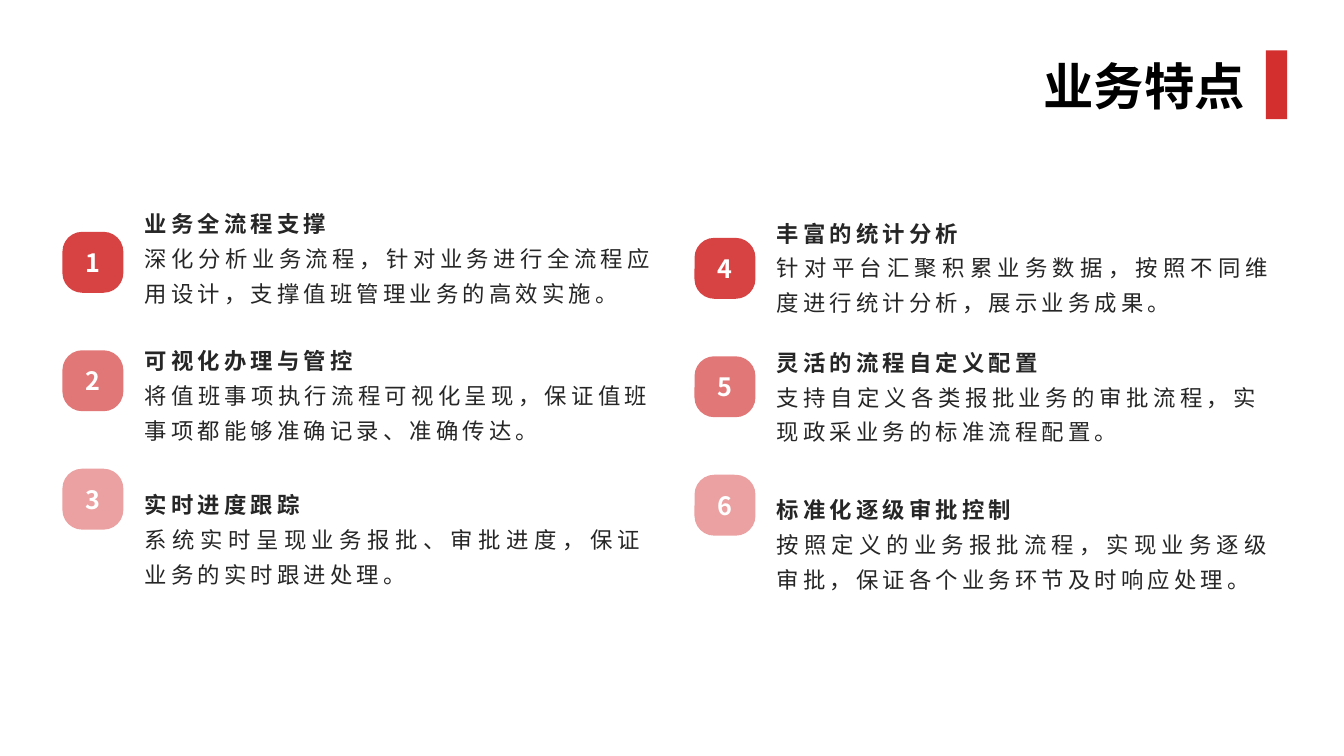
from dataclasses import dataclass

from lxml import etree
from pptx import Presentation
from pptx import util as u
from pptx.dml.color import RGBColor
from pptx.enum import shapes, text
from pptx.oxml import ns


@dataclass(frozen=True)
class Theme:
    font: str = "Noto Sans CJK SC"
    red: str = "D32F2F"
    black: str = "000000"
    ink: str = "262626"
    white: str = "FFFFFF"
    title: int = 36
    badge: int = 18
    body: int = 16
    track: int = 3
    lead: float = 1.3


THEME = Theme()
ALIGN = text.PP_ALIGN
BADGE = 43.5    # side of a number badge
PITCH = 84.6    # step from badge to badge
INDENT = 51.8   # from badge edge to text edge
HEIGHT = 82.8   # height of a text block
ALPHAS = (90, 65, 45)

# Each item: top below the column's first badge, width, heading, body
LEFT = [
    (-24.5, 378.7, "业务全流程支撑",
     "深化分析业务流程，针对业务进行全流程应用设计，支撑值班管理业务的高效实施。"),
    (73.4, 376.6, "可视化办理与管控",
     "将值班事项执行流程可视化呈现，保证值班事项都能够准确记录、准确传达。"),
    (175.7, 371.5, "实时进度跟踪",
     "系统实时呈现业务报批、审批进度，保证业务的实时跟进处理。"),
]
RIGHT = [
    (-22.3, 368.6, "丰富的统计分析",
     "针对平台汇聚积累业务数据，按照不同维度进行统计分析，展示业务成果。"),
    (69.9, 360, "灵活的流程自定义配置",
     "支持自定义各类报批业务的审批流程，实现政采业务的标准流程配置。"),
    (175, 367.2, "标准化逐级审批控制",
     "按照定义的业务报批流程，实现业务逐级审批，保证各个业务环节及时响应处理。"),
]


def write(para, words, size, color, bold=True, align=ALIGN.LEFT, track=0):
    """Fill one paragraph and style it as a whole."""
    para.add_run().text = words
    para.alignment = align
    font = para.font
    font.name = THEME.font
    font.size = u.Pt(size)
    font.bold = bold
    font.color.rgb = RGBColor.from_string(color)
    props = para._p.pPr.find(ns.qn("a:defRPr"))
    etree.SubElement(props, ns.qn("a:ea"), typeface=THEME.font)
    if track:
        props.set("spc", str(track * 100))


def add_text(slide, x, y, w, h):
    frame = slide.shapes.add_textbox(*map(u.Pt, (x, y, w, h))).text_frame
    frame.word_wrap = True
    frame.auto_size = text.MSO_AUTO_SIZE.SHAPE_TO_FIT_TEXT
    return frame


def add_block(slide, kind, x, y, w, h, alpha=100):
    """Add a plain red shape, see-through below 100 percent."""
    block = slide.shapes.add_shape(kind, *map(u.Pt, (x, y, w, h)))
    block.shadow.inherit = False
    block.line.fill.background()
    block.fill.solid()
    block.fill.fore_color.rgb = RGBColor.from_string(THEME.red)
    if alpha < 100:
        color = block._element.spPr.find(".//" + ns.qn("a:srgbClr"))
        etree.SubElement(color, ns.qn("a:alpha"), val=str(alpha * 1000))
    return block


def add_header(slide, x, y, w, h):
    """Right-aligned title with a red bar at its end."""
    bar = 15.2
    add_block(slide, shapes.MSO_SHAPE.RECTANGLE, x + w - bar, y, bar, h)
    frame = add_text(slide, x, y, 235.4, 51.1)
    write(frame.paragraphs[0], "业务特点", THEME.title, THEME.black,
          align=ALIGN.RIGHT)


def add_badge(slide, x, y, label, alpha):
    badge = add_block(slide, shapes.MSO_SHAPE.ROUNDED_RECTANGLE,
                      x, y, BADGE, BADGE, alpha)
    badge.adjustments[0] = 0.325
    frame = badge.text_frame
    frame.vertical_anchor = text.MSO_ANCHOR.MIDDLE
    write(frame.paragraphs[0], label, THEME.badge, THEME.white,
          align=ALIGN.CENTER)


def add_item(slide, x, y, w, head, body):
    """Bold heading over a justified body."""
    frame = add_text(slide, x, y, w, HEIGHT)
    lines = ((frame.paragraphs[0], head, True, ALIGN.LEFT),
             (frame.add_paragraph(), body, False, ALIGN.JUSTIFY))
    for para, words, bold, align in lines:
        write(para, words, THEME.body, THEME.ink, bold, align, THEME.track)
        para.line_spacing = THEME.lead


def add_column(slide, x, y, first, items):
    """Three numbered items, with badges at an even pitch."""
    for row, (top, width, head, body) in enumerate(items):
        add_badge(slide, x, y + row * PITCH, str(first + row), ALPHAS[row])
        add_item(slide, x + INDENT, y + top, width, head, body)


def main():
    deck = Presentation()
    deck.slide_width, deck.slide_height = u.Pt(960), u.Pt(540)
    slide = deck.slides.add_slide(deck.slide_layouts[6])
    add_header(slide, 661, 36, 258.5, 49.2)
    add_column(slide, 44.6, 165.6, 1, LEFT)
    add_column(slide, 496.1, 169.9, 4, RIGHT)
    deck.save("out.pptx")


if __name__ == "__main__":
    main()
